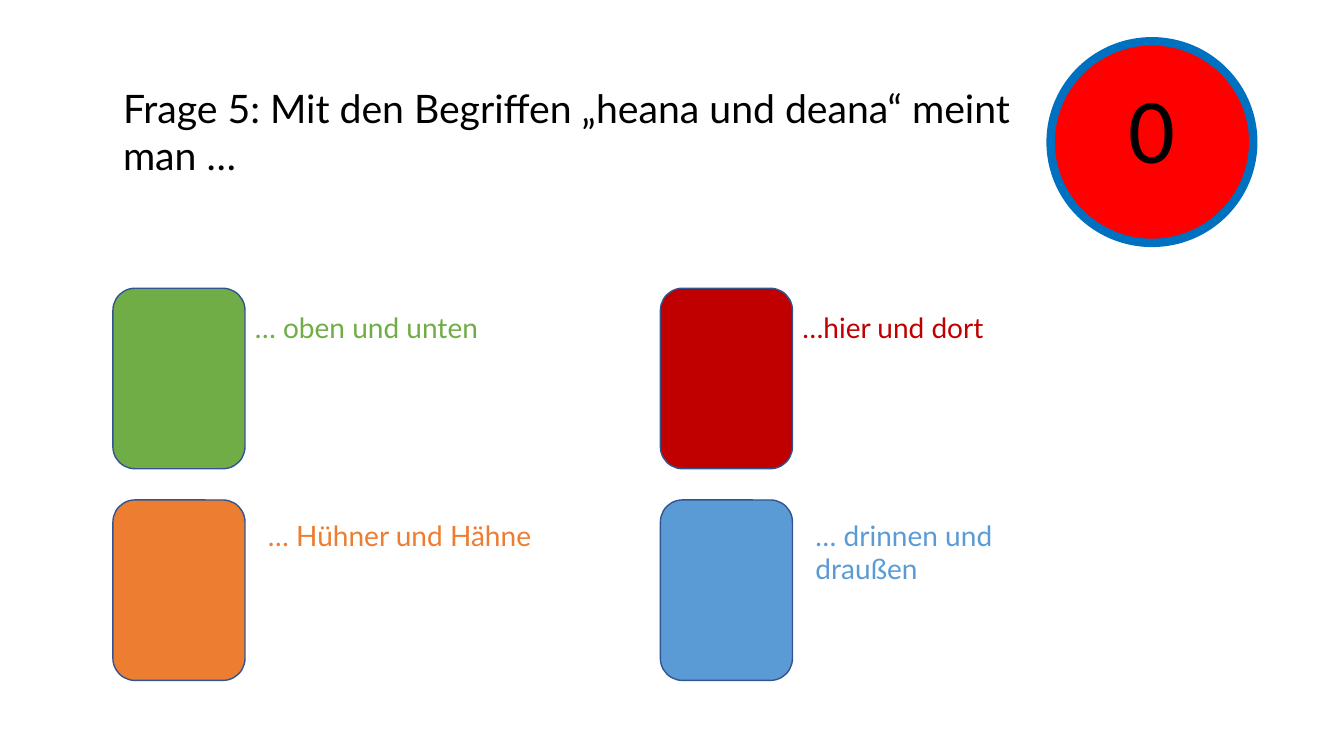
from pptx import Presentation
from pptx.dml.color import RGBColor
from pptx.enum.shapes import MSO_SHAPE
from pptx.enum.text import MSO_ANCHOR, MSO_AUTO_SIZE, PP_ALIGN
from pptx.util import Inches, Pt

# Answers: text, colour, column, row, text width, text height
ANSWERS = [
    ("… oben und unten", "70AD47", 0, 0, 3.07, 0.44),
    ("…hier und dort", "C00000", 1, 0, 3.68, 0.44),
    ("… Hühner und Hähne", "ED7D31", 0, 1, 3.07, 0.44),
    ("… drinnen und draußen", "5B9BD5", 1, 1, 2.77, 0.77),
]
CARD = (1.31, 1.79)
STEP = (5.43, 2.1)
# Offset of the text from its card, by row
SHIFT = [(1.31, 0.17), (1.44, 0.13)]


def color(code):
    return RGBColor.from_string(code)


def inches(box):
    return [Inches(n) for n in box]


def write(shape, text, size, code, font="Lato", align=PP_ALIGN.LEFT,
          anchor=MSO_ANCHOR.TOP):
    frame = shape.text_frame
    frame.text = text
    setup = {"word_wrap": True, "auto_size": MSO_AUTO_SIZE.NONE,
             "vertical_anchor": anchor}
    for name, value in setup.items():
        setattr(frame, name, value)
    for para in frame.paragraphs:
        para.alignment = align
        for run in para.runs:
            run.font.color.rgb = color(code)
            for name, value in {"size": Pt(size), "name": font}.items():
                setattr(run.font, name, value)


def draw(slide, kind, box, fill, line, width):
    shape = slide.shapes.add_shape(kind, *inches(box))
    shape.shadow.inherit = False
    shape.fill.solid()
    shape.fill.fore_color.rgb = color(fill)
    shape.line.color.rgb = color(line)
    shape.line.width = Pt(width)
    return shape


def add_title(slide, box, text):
    title = slide.shapes.title
    for name, value in zip(("left", "top", "width", "height"), inches(box)):
        setattr(title, name, value)
    write(title, text, 28, "000000")


def add_answers(slide, left, top):
    for text, code, col, row, width, height in ANSWERS:
        x, y = left + col * STEP[0], top + row * STEP[1]
        # Coloured card
        draw(slide, MSO_SHAPE.ROUNDED_RECTANGLE, (x, y, *CARD), code, "325491", 1)
        # Answer beside it
        dx, dy = SHIFT[row]
        label = slide.shapes.add_textbox(*inches((x + dx, y + dy, width, height)))
        write(label, text, 20, code)


def add_score(slide, box, text):
    disc = draw(slide, MSO_SHAPE.OVAL, box, "FF0000", "0070C0", 6)
    write(disc, text, 66, "000000", "Calibri", PP_ALIGN.CENTER, MSO_ANCHOR.MIDDLE)
    # Lift the digit above the centre
    disc.text_frame.margin_bottom = Inches(0.35)


def main():
    deck = Presentation()
    deck.slide_width, deck.slide_height = inches((13.33, 7.5))
    slide = deck.slides.add_slide(deck.slide_layouts[5])
    add_title(slide, (1.12, 0.79, 9.2, 1.04),
              "Frage 5: Mit den Begriffen „heana und deana“ meint\nman …")
    add_answers(slide, 1.12, 2.86)
    add_score(slide, (10.42, 0.41, 2.01, 2), "0")
    deck.save("out.pptx")


if __name__ == "__main__":
    main()
